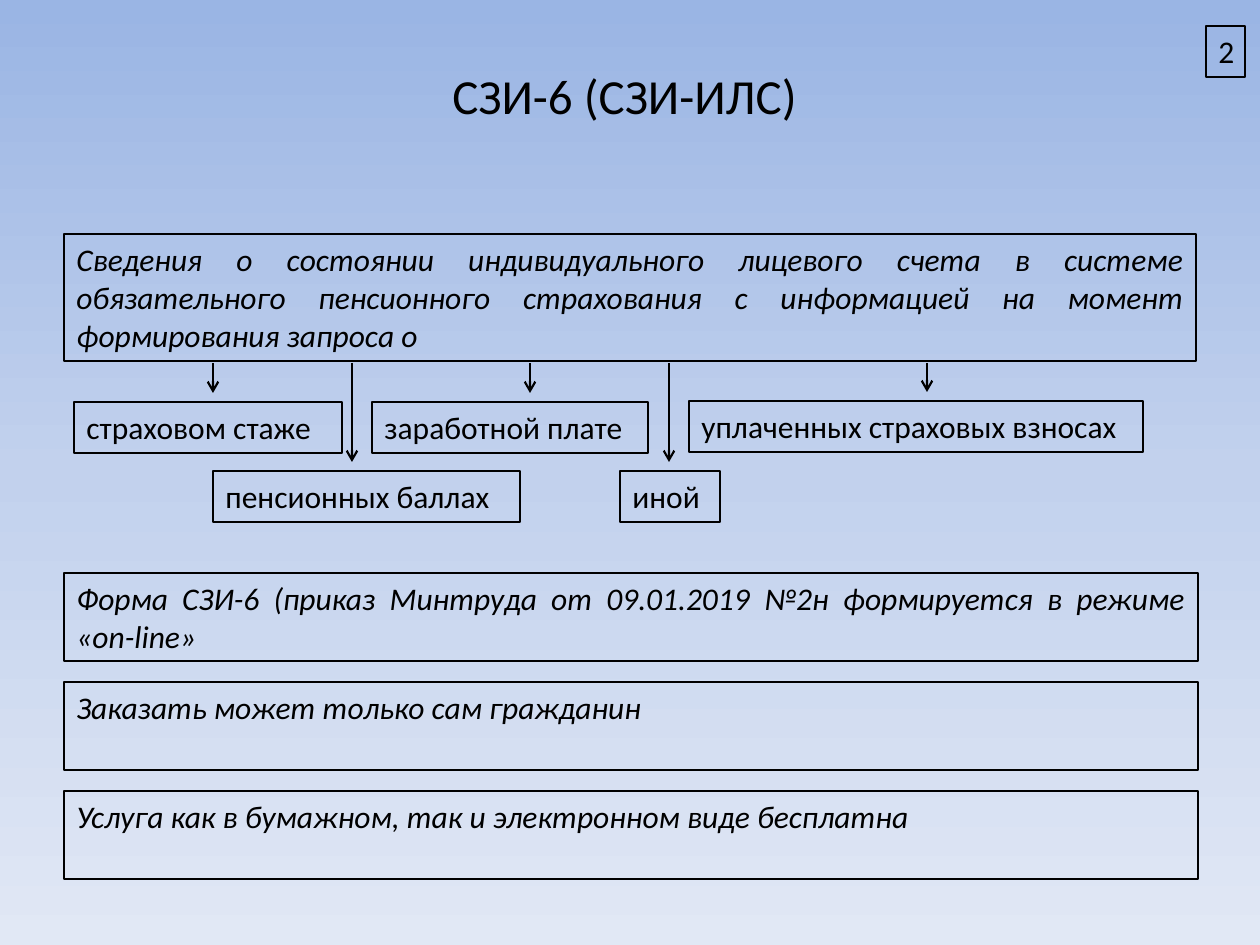
from copy import deepcopy
from dataclasses import dataclass

from lxml import etree
from pptx import Presentation, util as u
from pptx.dml.color import RGBColor
from pptx.enum import shapes as sh, text as tx
from pptx.oxml import ns


@dataclass(frozen=True)
class Theme:
    ink: str = "000000"
    sky: tuple = ("9AB5E4", "C2D1ED", "E1E8F5")
    font: str = "Calibri"
    head: int = 28
    body: int = 18
    edge: float = 0.75
    stem: float = 1.25


THEME = Theme()
JUST = tx.PP_ALIGN.JUSTIFY


def px(n):
    return u.Inches(n / 126)


def rgb(code):
    return RGBColor.from_string(code)


def paint(slide):
    fill = slide.background.fill
    fill.gradient()
    fill.gradient_angle = 270
    first = next(slide.element.iter(ns.qn("a:gs")))
    first.addnext(deepcopy(first))
    for i, (stop, code) in enumerate(zip(fill.gradient_stops, THEME.sky)):
        stop.position = i / 2
        stop.color.rgb = rgb(code)


def label(slide, box, words, align=JUST, size=THEME.body, italic=False, edge=True):
    shape = slide.shapes.add_textbox(*map(px, box))
    if edge:
        shape.line.color.rgb = rgb(THEME.ink)
        shape.line.width = u.Pt(THEME.edge)
    frame = shape.text_frame
    frame.word_wrap = True
    frame.text = words
    para = frame.paragraphs[0]
    para.alignment = align
    font = para.runs[0].font
    font.name, font.size, font.italic = THEME.font, u.Pt(size), italic
    font.color.rgb = rgb(THEME.ink)
    return frame


def arrow(slide, x, top, end):
    line = slide.shapes.add_connector(
        sh.MSO_CONNECTOR.STRAIGHT, px(x), px(top), px(x), px(end))
    line.line.color.rgb = rgb(THEME.ink)
    line.line.width = u.Pt(THEME.stem)
    etree.SubElement(line.line._get_or_add_ln(), ns.qn("a:tailEnd"), type="arrow")
    etree.SubElement(line.element.spPr, ns.qn("a:effectLst"))


def header(slide, box):
    frame = label(slide, box, "СЗИ-6 (СЗИ-ИЛС) ", tx.PP_ALIGN.CENTER,
                  THEME.head, edge=False)
    frame.vertical_anchor = tx.MSO_ANCHOR.MIDDLE


def tree(slide, box):
    left, top, width, deep = box
    label(slide, box,
          "Сведения о состоянии индивидуального лицевого счета в системе "
          "обязательного пенсионного страхования с информацией на момент "
          "формирования запроса о", italic=True)
    items = (
        ("страховом стаже", 10, 168, 268, 149),
        ("заработной плате", 308, 168, 276, 466),
        ("уплаченных страховых взносах ", 625, 167, 454, 863),
        ("пенсионных баллах ", 149, 237, 307, 288),
        ("иной", 556, 237, 100, 605),
    )
    for words, x, y, wide, stem in items:
        label(slide, (left + x, top + y, wide, 51), words)
        arrow(slide, left + stem, top + deep + 2, top + y - 9)


def notes(slide, box):
    left, top, width, height = box
    items = (
        "Форма СЗИ-6 (приказ Минтруда от 09.01.2019 №2н формируется в режиме «on-line»",
        "Заказать может только сам гражданин",
        "Услуга как в бумажном, так и электронном виде бесплатна",
    )
    gap = 21
    deep = (height - gap * (len(items) - 1)) // len(items)
    for i, words in enumerate(items):
        label(slide, (left, top + i * (deep + gap), width, deep), words, italic=True)


def main():
    deck = Presentation()
    deck.slide_width, deck.slide_height = px(1260), px(945)
    slide = deck.slides.add_slide(deck.slide_layouts[6])
    paint(slide)
    header(slide, (63, 16, 1134, 158))
    tree(slide, (64, 234, 1132, 127))
    notes(slide, (64, 573, 1134, 306))
    label(slide, (1206, 26, 39, 51), "2", tx.PP_ALIGN.LEFT)
    deck.save("out.pptx")


if __name__ == "__main__":
    main()
